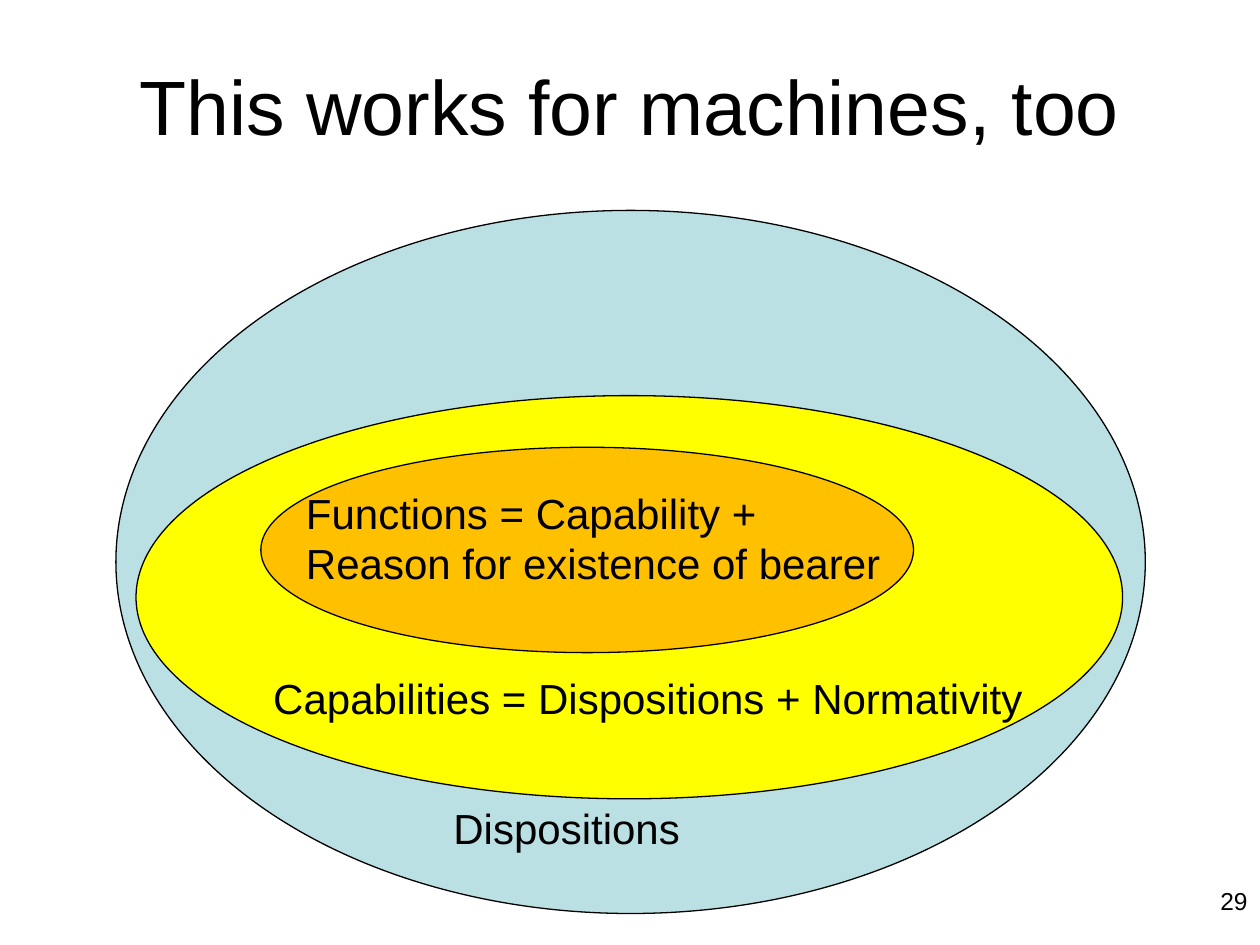
from pptx import Presentation
from pptx.dml.color import RGBColor
from pptx.enum.shapes import MSO_SHAPE
from pptx.enum.text import MSO_ANCHOR, PP_ALIGN
from pptx.util import Inches, Pt

COLORS = {
    "ink": "000000",
    "paper": "FFFFFF",
    "dispositions": "BBE0E3",
    "capabilities": "FFFF00",
    "functions": "FFC000",
}
FONT = "Arial"


def color(name):
    """Return the named colour."""
    return RGBColor.from_string(COLORS[name])


def add_text(slide, box, wording, size, align=PP_ALIGN.LEFT, anchor=MSO_ANCHOR.TOP):
    """Place wrapped text in the box, given in inches."""
    frame = slide.shapes.add_textbox(*map(Inches, box)).text_frame
    frame.word_wrap = True
    frame.vertical_anchor = anchor
    frame.text = wording
    paragraph = frame.paragraphs[0]
    paragraph.alignment = align
    font = paragraph.runs[0].font
    font.name = FONT
    font.size = Pt(size)
    font.color.rgb = color("ink")


def add_ellipse(slide, box, fill):
    """Place an outlined ellipse in the box, given in inches."""
    ellipse = slide.shapes.add_shape(MSO_SHAPE.OVAL, *map(Inches, box))
    ellipse.shadow.inherit = False
    ellipse.fill.solid()
    ellipse.fill.fore_color.rgb = color(fill)
    ellipse.line.color.rgb = color("ink")
    ellipse.line.width = Pt(0.75)


def add_nested_sets(slide, box):
    """Place the three nested sets and their labels in the box."""
    left, top, width, height = box
    sets = [
        ("dispositions", (0, 0, width, height),
         "Dispositions", (2.58, 4.65, 4.58, 0.51)),
        ("capabilities", (0.16, 1.47, 7.83, 3.2),
         "Capabilities = Dispositions + Normativity", (1.15, 3.62, 6.45, 0.51)),
        ("functions", (1.15, 1.88, 5.18, 1.63),
         "Functions = Capability + Reason for existence of bearer",
         (1.41, 2.15, 4.92, 0.91)),
    ]
    for fill, (x, y, w, h), _, _ in sets:
        add_ellipse(slide, (left + x, top + y, w, h), fill)
    for _, _, label, (x, y, w, h) in sets:
        add_text(slide, (left + x, top + y, w, h), label, 24)


def main():
    """Build and save the slide."""
    deck = Presentation()
    deck.slide_width, deck.slide_height = Inches(10), Inches(7.5)
    slide = deck.slides.add_slide(deck.slide_layouts[6])
    slide.background.fill.solid()
    slide.background.fill.fore_color.rgb = color("paper")
    add_nested_sets(slide, (0.92, 1.67, 8.17, 5.58))
    add_text(slide, (0, 0, 10, 1.67), "This works for machines, too", 44,
             PP_ALIGN.CENTER, MSO_ANCHOR.MIDDLE)
    add_text(slide, (7.67, 6.98, 2.33, 0.52), "29", 14, PP_ALIGN.RIGHT)
    deck.save("out.pptx")


if __name__ == "__main__":
    main()
